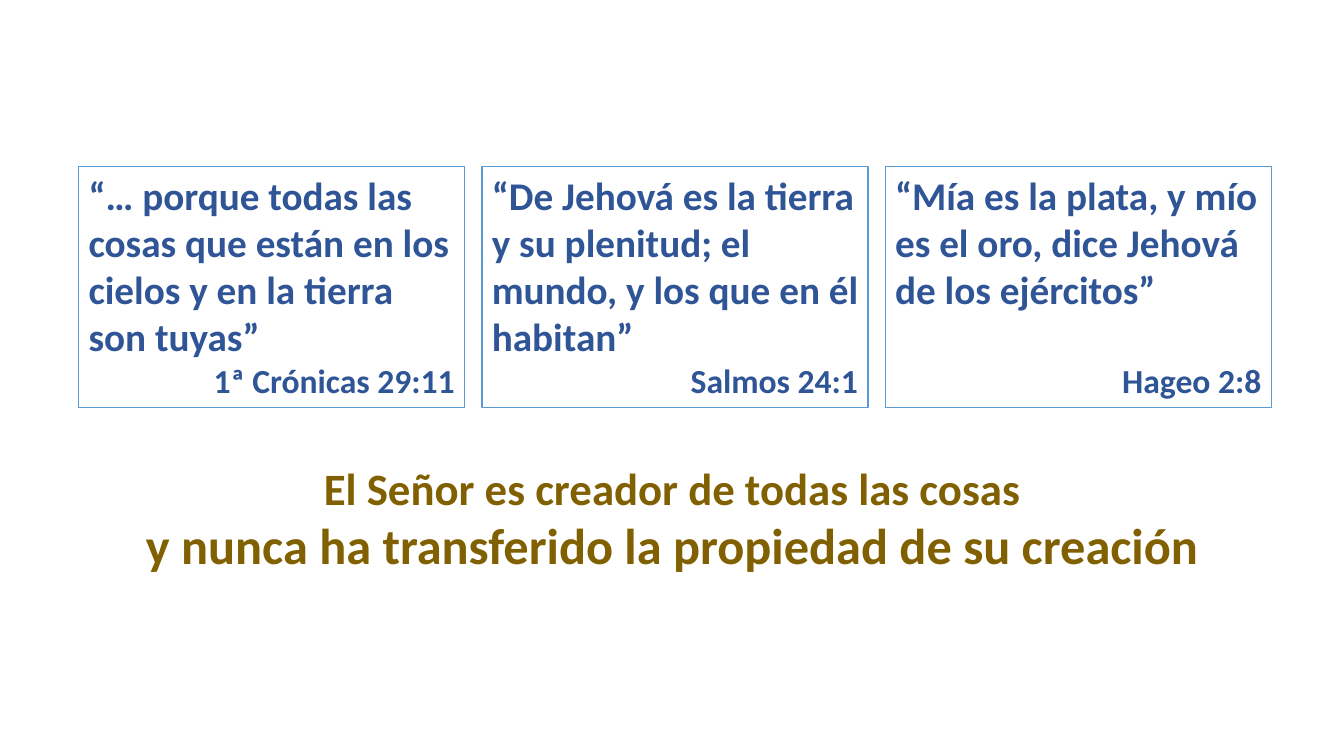
from dataclasses import dataclass

from pptx import Presentation
from pptx.dml.color import RGBColor as RGB
from pptx.enum.shapes import MSO_SHAPE as SHAPE
from pptx.enum.text import MSO_ANCHOR as ANCHOR, MSO_AUTO_SIZE as AUTO, PP_ALIGN as ALIGN
from pptx.util import Inches, Pt


@dataclass(frozen=True)
class Theme:
    font: str = "Calibri"
    card: str = "FFFFFF"
    border: str = "5B9BD5"
    verse: str = "2F5597"
    message: str = "806000"
    verse_size: int = 28
    source_size: int = 24
    lead_size: int = 32
    claim_size: int = 36
    verse_line: int = 34  # height of one line of verse, in points


def write(p, text, *, size, color, font, align=ALIGN.LEFT, before=0):
    """Fill a paragraph with one bold run."""
    p.alignment = align
    p.space_before = Pt(before)
    r = p.add_run()
    r.text = text
    r.font.name, r.font.size, r.font.bold = font, Pt(size), True
    r.font.color.rgb = RGB.from_string(color)


class Deck:
    # Grid of verse cards, in inches
    LEFT, TOP = 0.78, 1.65
    COL, ROW, GAP = 3.83, 2.39, 0.17

    def __init__(self, theme):
        self.theme = theme
        self.prs = Presentation()
        self.prs.slide_width, self.prs.slide_height = Inches(13.33), Inches(7.5)
        self.s = self.prs.slides.add_slide(self.prs.slide_layouts[6])

    def card(self, col, verse, source, skip=0):
        """Verse card in a grid column; skip leaves lines free above the source."""
        t = self.theme
        left = self.LEFT + col * (self.COL + self.GAP)
        sp = self.s.shapes.add_shape(
            SHAPE.RECTANGLE, Inches(left), Inches(self.TOP), Inches(self.COL), Inches(self.ROW))
        sp.shadow.inherit = False
        sp.fill.solid()
        sp.fill.fore_color.rgb = RGB.from_string(t.card)
        sp.line.color.rgb = RGB.from_string(t.border)
        sp.line.width = Pt(1)
        tf = sp.text_frame
        tf.word_wrap, tf.auto_size = True, AUTO.SHAPE_TO_FIT_TEXT
        tf.vertical_anchor = ANCHOR.TOP
        write(tf.paragraphs[0], verse, size=t.verse_size, color=t.verse, font=t.font)
        write(tf.add_paragraph(), source, size=t.source_size, color=t.verse, font=t.font,
              align=ALIGN.RIGHT, before=skip * t.verse_line)

    def message(self, left, top, width, height, lines):
        """Centred lines of (text, size) in an unwrapped text box."""
        t = self.theme
        sp = self.s.shapes.add_textbox(Inches(left), Inches(top), Inches(width), Inches(height))
        tf = sp.text_frame
        tf.word_wrap, tf.auto_size = False, AUTO.SHAPE_TO_FIT_TEXT
        for i, (text, size) in enumerate(lines):
            p = tf.add_paragraph() if i else tf.paragraphs[0]
            write(p, text, size=size, color=t.message, font=t.font, align=ALIGN.CENTER)


def main():
    theme = Theme()
    deck = Deck(theme)

    # Verses
    verses = [
        ("“… porque todas las cosas que están en los cielos y en la tierra son tuyas”",
         "1ª Crónicas 29:11", 0),
        ("“De Jehová es la tierra y su plenitud; el mundo, y los que en él habitan”",
         "Salmos 24:1", 0),
        ("“Mía es la plata, y mío es el oro, dice Jehová de los ejércitos”",
         "Hageo 2:8", 1),
    ]
    for col, (verse, source, skip) in enumerate(verses):
        deck.card(col, verse, source, skip)

    # Conclusion
    deck.message(1.29, 4.52, 10.76, 1.25, [
        ("El Señor es creador de todas las cosas", theme.lead_size),
        ("y nunca ha transferido la propiedad de su creación", theme.claim_size),
    ])

    deck.prs.save("out.pptx")


if __name__ == "__main__":
    main()
